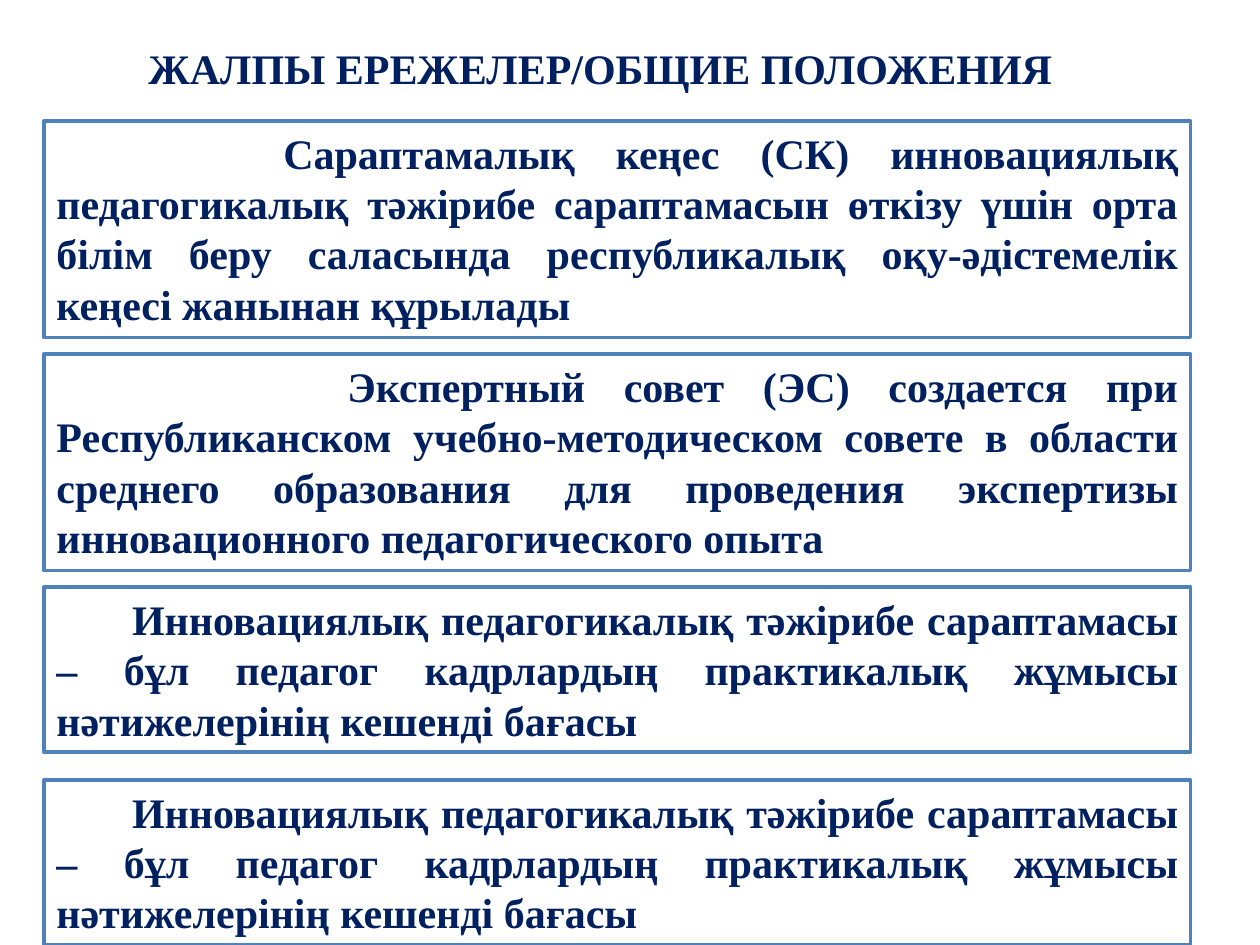
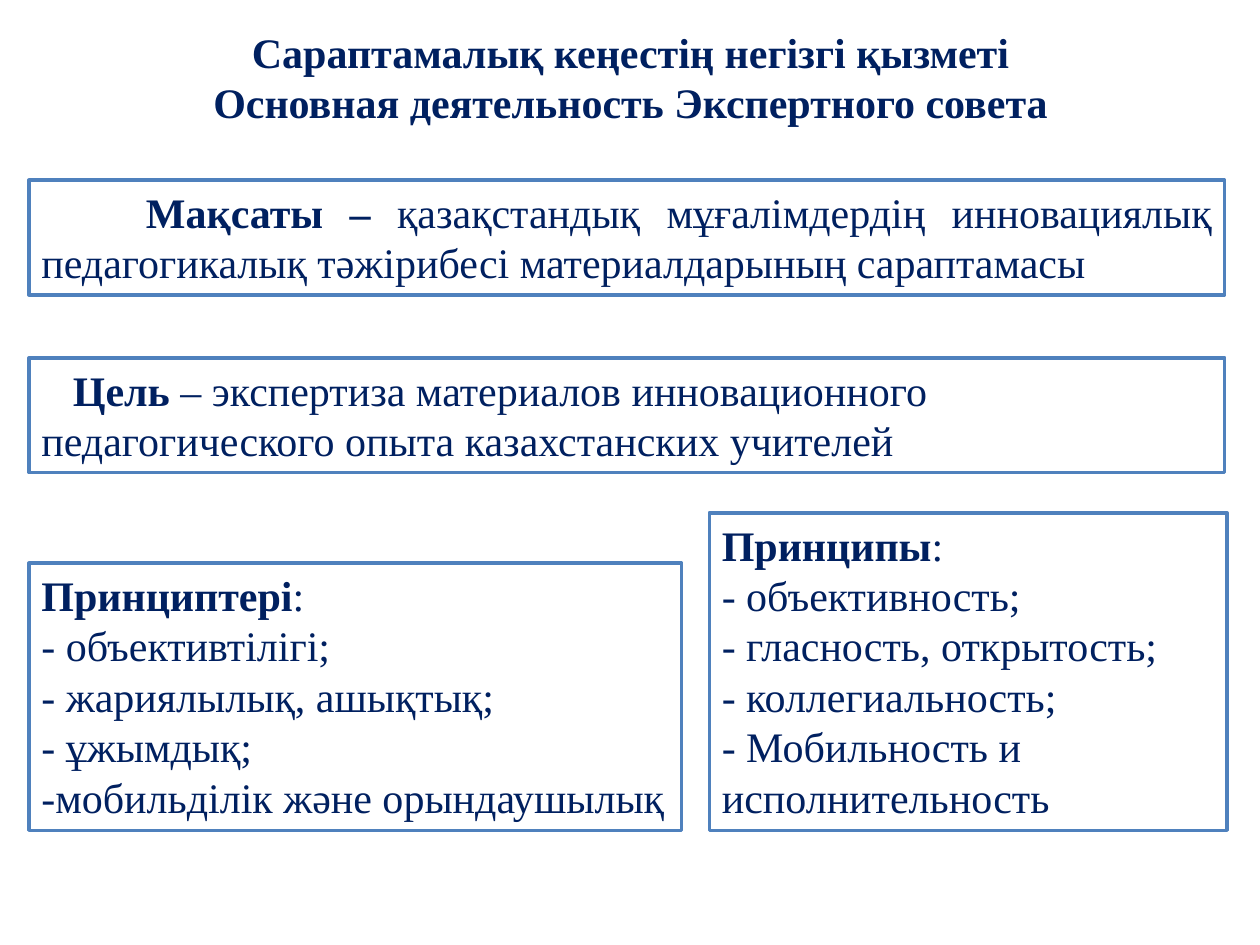
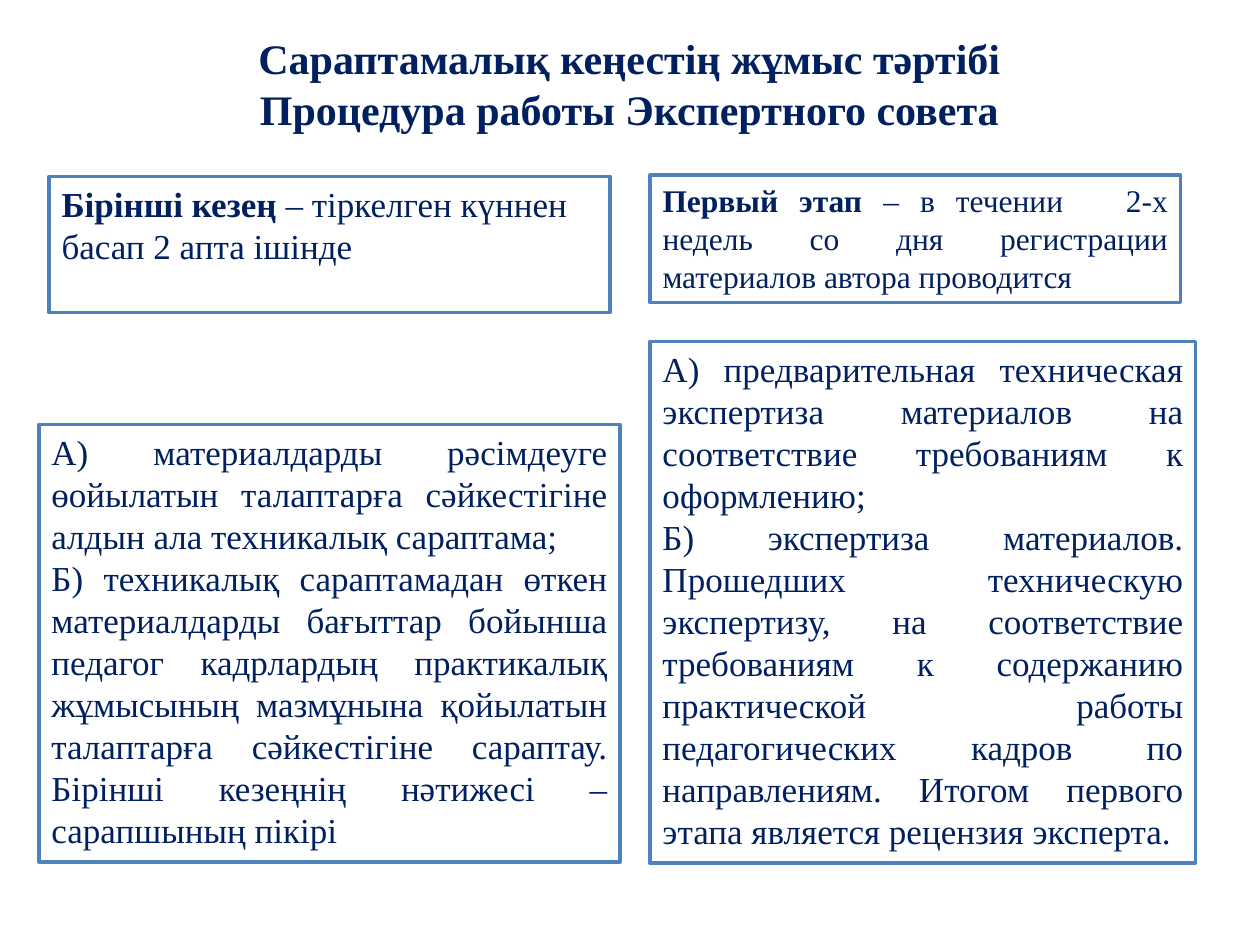
from dataclasses import dataclass

from pptx import Presentation
from pptx.dml.color import RGBColor
from pptx.enum.shapes import MSO_SHAPE
from pptx.enum.text import MSO_ANCHOR, MSO_AUTO_SIZE, PP_ALIGN
from pptx.util import Inches, Pt


@dataclass(frozen=True)
class Theme:
    font: str = "Times New Roman"
    ink: RGBColor = RGBColor(0x00, 0x20, 0x60)
    paper: RGBColor = RGBColor(0xFF, 0xFF, 0xFF)
    border: RGBColor = RGBColor(0x4F, 0x81, 0xBD)
    border_width: float = 2
    large: int = 24
    medium: int = 20
    small: int = 18


THEME = Theme()
TITLE_ONLY = 5


def place(shape, box):
    for name, length in zip(("left", "top", "width", "height"), box):
        setattr(shape, name, Inches(length))


def write(frame, paras, size, align, anchor, indent=0):
    """Fill a text frame; each paragraph is a pair of bold and plain text."""
    settings = {"word_wrap": True, "auto_size": MSO_AUTO_SIZE.NONE, "vertical_anchor": anchor}
    for name, value in settings.items():
        setattr(frame, name, value)
    for index, words in enumerate(paras):
        para = frame.add_paragraph() if index else frame.paragraphs[0]
        para.alignment = align
        if indent:
            para._p.get_or_add_pPr().set("indent", str(Inches(indent)))
        for text, bold in zip(words, (True, False)):
            if not text:
                continue
            span = para.add_run()
            span.text = text
            span.font.color.rgb = THEME.ink
            for name, value in {"name": THEME.font, "size": Pt(size), "bold": bold}.items():
                setattr(span.font, name, value)


def add_page(deck, box, title_lines):
    page = deck.slides.add_slide(deck.slide_layouts[TITLE_ONLY])
    title = page.shapes.title
    place(title, box)
    write(title.text_frame, [(line, "") for line in title_lines], THEME.large,
          PP_ALIGN.CENTER, MSO_ANCHOR.TOP)
    return page


def add_panel(page, box, paras, size=THEME.large, align=PP_ALIGN.JUSTIFY, indent=0):
    panel = page.shapes.add_shape(MSO_SHAPE.RECTANGLE, *map(Inches, box))
    panel.shadow.inherit = False
    panel.fill.solid()
    panel.fill.fore_color.rgb = THEME.paper
    panel.line.color.rgb = THEME.border
    panel.line.width = Pt(THEME.border_width)
    write(panel.text_frame, paras, size, align, MSO_ANCHOR.TOP, indent)


def build_provisions(deck):
    page = add_page(deck, (0.63, 0.29, 8.27, 0.5), ["ЖАЛПЫ ЕРЕЖЕЛЕР/ОБЩИЕ ПОЛОЖЕНИЯ"])
    council_kk = (
        "Сараптамалық кеңес (СК) инновациялық педагогикалық тәжірибе сараптамасын өткізу "
        "үшін орта білім беру саласында республикалық оқу-әдістемелік кеңесі жанынан құрылады")
    council_ru = (
        "Экспертный совет (ЭС) создается при Республиканском учебно-методическом совете "
        "в области среднего образования для проведения экспертизы инновационного "
        "педагогического опыта")
    review = (
        "Инновациялық педагогикалық тәжірибе сараптамасы – бұл педагог кадрлардың "
        "практикалық жұмысы нәтижелерінің кешенді бағасы")
    provisions = [
        (0.96, 1.72, 1.8, council_kk),
        (2.81, 1.72, 2.31, council_ru),
        (4.66, 1.31, 0.6, review),
        (6.19, 1.31, 0.6, review),
    ]
    for top, height, indent, text in provisions:
        add_panel(page, (0.35, top, 9.1, height), [(text, "")], indent=indent)


def build_activity(deck):
    page = add_page(deck, (1.34, 0.16, 7.33, 0.91), [
        "Сараптамалық кеңестің негізгі қызметі",
        "Основная деятельность Экспертного совета"])
    left, width, goal_height, bottom = 0.23, 9.49, 0.91, 6.59
    add_panel(page, (left, 1.43, width, goal_height), [(
        "Мақсаты – ",
        "қазақстандық мұғалімдердің инновациялық педагогикалық тәжірибесі "
        "материалдарының сараптамасы")], indent=0.83)
    add_panel(page, (left, 2.84, width, goal_height), [(
        "Цель",
        " – экспертиза материалов инновационного педагогического опыта "
        "казахстанских учителей")], align=PP_ALIGN.LEFT, indent=0.25)
    principles = [
        (left, 5.18, 2.12, "Принциптері", [
            "- объективтілігі;", "- жариялылық, ашықтық;", "- ұжымдық;",
            "-мобильділік және орындаушылық"]),
        (5.63, 4.11, 2.52, "Принципы", [
            "- объективность;", "- гласность, открытость;", "- коллегиальность;",
            "- Мобильность и исполнительность"]),
    ]
    for x, panel_width, height, heading, items in principles:
        add_panel(page, (x, bottom - height, panel_width, height),
                  [(heading, ":")] + [("", item) for item in items], align=PP_ALIGN.LEFT)


def build_procedure(deck):
    page = add_page(deck, (1.61, 0.21, 6.77, 0.91), [
        "Сараптамалық кеңестің жұмыс тәртібі",
        "Процедура работы Экспертного совета"])
    add_panel(page, (0.39, 1.4, 4.45, 1.08), [(
        "Бірінші кезең ", "– тіркелген күннен басап 2 апта ішінде")],
        THEME.medium, PP_ALIGN.LEFT)
    add_panel(page, (5.16, 1.39, 4.21, 1.01), [(
        "Первый этап ",
        "– в течении   2-х недель со дня регистрации материалов автора проводится")],
        THEME.small)
    steps = [
        ((0.31, 3.37, 4.61, 3.47), [
            "А) материалдарды рәсімдеуге өойылатын талаптарға сәйкестігіне алдын ала "
            "техникалық сараптама;",
            "Б) техникалық сараптамадан өткен материалдарды бағыттар бойынша педагог "
            "кадрлардың практикалық жұмысының мазмұнына қойылатын талаптарға сәйкестігіне "
            "сараптау. Бірінші кезеңнің нәтижесі – сарапшының пікірі"]),
        ((5.16, 2.71, 4.33, 4.14), [
            "А) предварительная техническая экспертиза материалов на соответствие "
            "требованиям к оформлению;",
            "Б) экспертиза материалов. Прошедших техническую экспертизу, на соответствие "
            "требованиям к содержанию практической работы педагогических кадров по "
            "направлениям. Итогом первого этапа является рецензия эксперта."]),
    ]
    for box, texts in steps:
        add_panel(page, box, [("", text) for text in texts], THEME.medium)


def main():
    deck = Presentation()
    deck.slide_width, deck.slide_height = Inches(10), Inches(7.5)
    for build in (build_provisions, build_activity, build_procedure):
        build(deck)
    deck.save("out.pptx")


if __name__ == "__main__":
    main()
